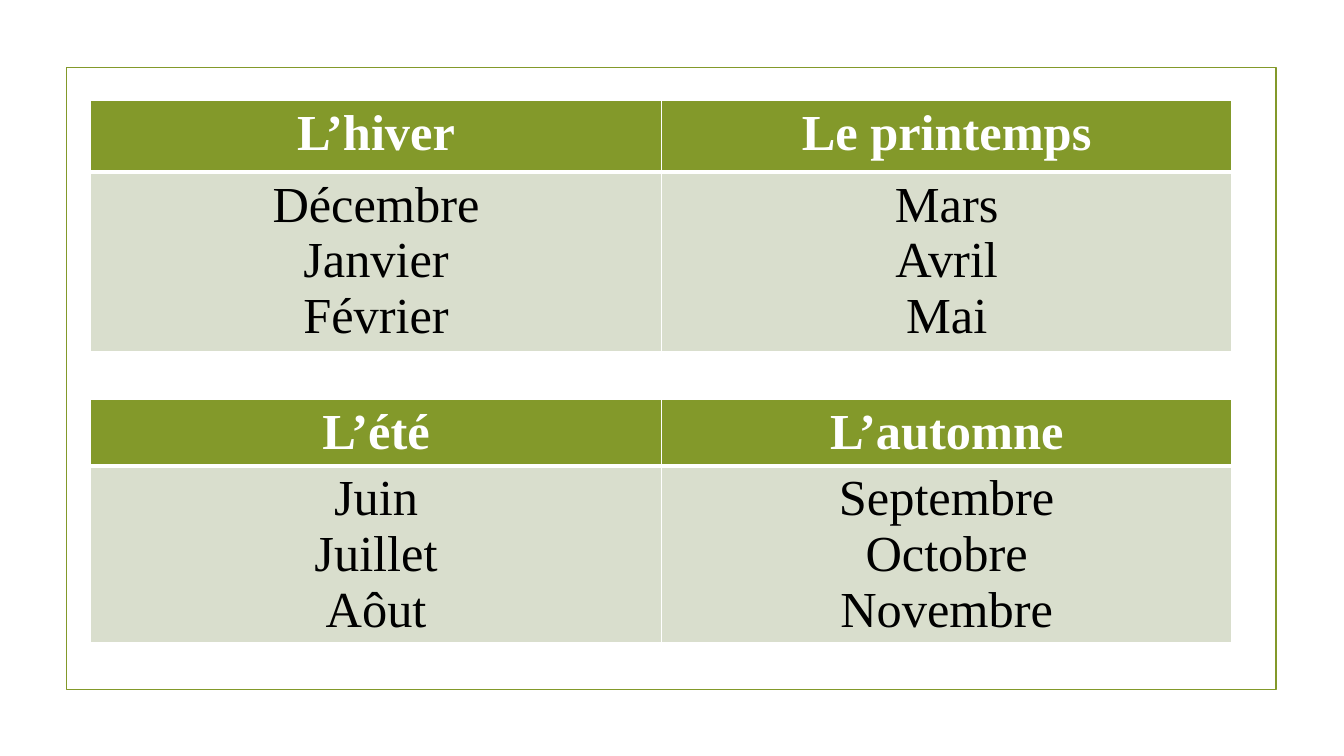
"""Build a slide of French seasons and their months."""
from lxml import etree
from pptx import Presentation
from pptx.dml.color import RGBColor
from pptx.enum import shapes, text
from pptx.oxml import ns
from pptx.util import Inches, Pt

COLOURS = {"green": "83992A", "pale": "D9DECD", "white": "FFFFFF", "black": "000000"}
HEADER = {"fill": "green", "colour": "white", "bold": True, "edges": {"L": 1, "R": 1, "T": 1, "B": 3}}
BODY = {"fill": "pale", "colour": "black", "bold": False, "edges": {"L": 1, "R": 1, "T": 3, "B": 1}}
COLUMN_WIDTH = 5.66
SEASON_TABLES = [
    {
        "top": 1,
        "heights": [0.71, 1.78],
        "seasons": {
            "L’hiver": ["Décembre", "Janvier", "Février"],
            "Le printemps": ["Mars", "Avril", "Mai"],
        },
    },
    {
        "top": 3.96,
        "heights": [0.66, 1.65],
        "seasons": {
            "L’été": ["Juin", "Juillet", "Aôut"],
            "L’automne": ["Septembre", "Octobre", "Novembre"],
        },
    },
]


def colour(name):
    """Return the named colour."""
    return RGBColor.from_string(COLOURS[name])


def add_frame(slide):
    """Draw the thin green frame around the tables."""
    frame = slide.shapes.add_shape(
        shapes.MSO_SHAPE.RECTANGLE, Inches(0.66), Inches(0.67), Inches(12), Inches(6.17)
    )
    frame.shadow.inherit = False
    frame.fill.background()
    frame.line.color.rgb = colour("green")
    frame.line.width = Pt(1.25)


def set_borders(cell, edges):
    """Give each side of a cell a white line of its own width."""
    properties = cell._tc.get_or_add_tcPr()
    for side, width in edges.items():
        line = etree.SubElement(properties, ns.qn(f"a:ln{side}"), w=str(Pt(width)))
        fill = etree.SubElement(line, ns.qn("a:solidFill"))
        etree.SubElement(fill, ns.qn("a:srgbClr"), val=COLOURS["white"])


def fill_cell(cell, lines, style):
    """Write centred lines into a cell and style it."""
    set_borders(cell, style["edges"])
    cell.fill.solid()
    cell.fill.fore_color.rgb = colour(style["fill"])
    cell.text = "\n".join(lines)
    font_format = {"name": "Times New Roman", "size": Pt(36), "bold": style["bold"]}
    for paragraph in cell.text_frame.paragraphs:
        paragraph.alignment = text.PP_ALIGN.CENTER
        font = paragraph.runs[0].font
        for attribute, value in font_format.items():
            setattr(font, attribute, value)
        font.color.rgb = colour(style["colour"])


def add_season_table(slide, top, heights, seasons):
    """Add a table with a season heading above its months in each column."""
    table = slide.shapes.add_table(
        len(heights), len(seasons), Inches(0.9), Inches(top),
        Inches(COLUMN_WIDTH * len(seasons)), Inches(sum(heights)),
    ).table
    for row, height in zip(table.rows, heights):
        row.height = Inches(height)
    for column, (season, months) in enumerate(seasons.items()):
        table.columns[column].width = Inches(COLUMN_WIDTH)
        fill_cell(table.cell(0, column), [season], HEADER)
        fill_cell(table.cell(1, column), months, BODY)


def main():
    """Build and save the presentation."""
    presentation = Presentation()
    presentation.slide_width = Inches(13.33)
    presentation.slide_height = Inches(7.5)
    slide = presentation.slides.add_slide(presentation.slide_layouts[6])
    add_frame(slide)
    for season_table in SEASON_TABLES:
        add_season_table(slide, **season_table)
    presentation.save("out.pptx")


if __name__ == "__main__":
    main()
